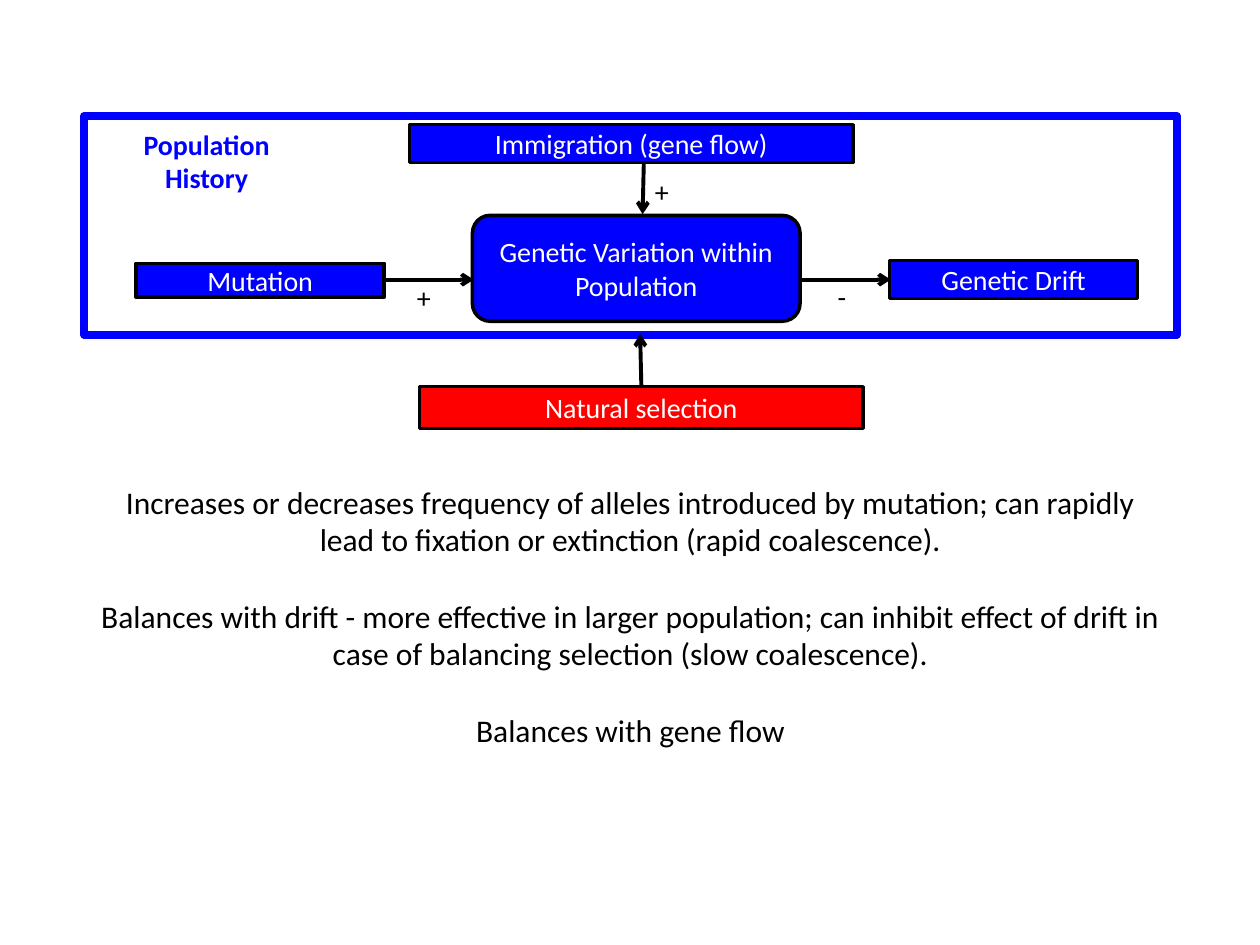
from dataclasses import dataclass

import pptx
import pptx.dml.color
import pptx.enum.shapes
import pptx.enum.text
import pptx.oxml.ns
import pptx.util
from lxml import etree

Pt = pptx.util.Pt
RGB = pptx.dml.color.RGBColor
SHAPES = pptx.enum.shapes.MSO_SHAPE
ALIGN = pptx.enum.text.PP_ALIGN


@dataclass(frozen=True)
class Theme:
    font: str = "Calibri"
    blue: RGB = RGB(0, 0, 255)
    red: RGB = RGB(255, 0, 0)
    black: RGB = RGB(0, 0, 0)
    white: RGB = RGB(255, 255, 255)
    label_size: float = 16
    body_size: float = 18
    box_line: float = 2
    arrow_line: float = 2.25
    frame_line: float = 4.5
    paragraph_gap: float = 22


THEME = Theme()


def write_text(frame, text, size, color, align=ALIGN.CENTER, bold=False, gap=0):
    frame.text = text
    for index, paragraph in enumerate(frame.paragraphs):
        paragraph.alignment = align
        if index and gap:
            paragraph.space_before = Pt(gap)
        for run in paragraph.runs:
            run.font.name = THEME.font
            run.font.size = Pt(size)
            run.font.bold = bold
            run.font.color.rgb = color


def add_outline(slide, place, line_color, line_width, preset=SHAPES.RECTANGLE):
    outline = slide.shapes.add_shape(preset, *map(Pt, place))
    outline.shadow.inherit = False
    outline.fill.background()
    outline.line.color.rgb = line_color
    outline.line.width = Pt(line_width)
    return outline


def add_factor(slide, text, place, fill=THEME.blue, preset=SHAPES.RECTANGLE):
    factor = add_outline(slide, place, THEME.black, THEME.box_line, preset)
    factor.fill.solid()
    factor.fill.fore_color.rgb = fill
    factor.text_frame.vertical_anchor = pptx.enum.text.MSO_ANCHOR.MIDDLE
    write_text(factor.text_frame, text, THEME.label_size, THEME.white)


def add_label(slide, text, place, color=THEME.black, align=ALIGN.LEFT, bold=False):
    label = slide.shapes.add_textbox(*map(Pt, place))
    label.text_frame.word_wrap = False
    write_text(label.text_frame, text, THEME.label_size, color, align, bold)


def add_arrow(slide, start, end):
    arrow = slide.shapes.add_connector(
        pptx.enum.shapes.MSO_CONNECTOR.STRAIGHT, *map(Pt, start + end))
    arrow.line.color.rgb = THEME.black
    arrow.line.width = Pt(THEME.arrow_line)
    qn = pptx.oxml.ns.qn
    etree.SubElement(arrow.line._get_or_add_ln(), qn("a:tailEnd"), type="arrow")
    etree.SubElement(arrow._element.spPr, qn("a:effectLst"))


def add_commentary(slide, paragraphs, place):
    commentary = slide.shapes.add_textbox(*map(Pt, place))
    commentary.text_frame.word_wrap = True
    write_text(commentary.text_frame, "\n".join(paragraphs), THEME.body_size,
               THEME.black, gap=THEME.paragraph_gap)


def main():
    deck = pptx.Presentation()
    deck.slide_width, deck.slide_height = Pt(720), Pt(540)
    slide = deck.slides.add_slide(deck.slide_layouts[6])

    add_factor(slide, "Genetic Variation within Population",
               (270, 123.1, 187.2, 60.5), preset=SHAPES.ROUNDED_RECTANGLE)
    add_factor(slide, "Mutation", (77.8, 150.5, 141.8, 19.4))
    add_factor(slide, "Genetic Drift", (508.3, 149, 141.8, 21.6))
    add_factor(slide, "Immigration (gene flow)", (234, 71.3, 253.4, 21.6))

    add_arrow(slide, (219.6, 159.8), (270.7, 159.8))
    add_arrow(slide, (457.9, 159.8), (509, 159.8))
    add_arrow(slide, (367.9, 93.6), (367.2, 122.4))

    add_label(slide, "+", (231.1, 157, 23.8, 26.6))
    add_label(slide, "-", (471.6, 156.2, 20.2, 26.6))
    add_label(slide, "+", (367.2, 96.5, 23.8, 26.6))

    add_outline(slide, (48.2, 66.2, 624.2, 125.3), THEME.blue, THEME.frame_line)
    add_label(slide, "Population\nHistory", (69.1, 69.1, 97.9, 46.1),
              THEME.blue, ALIGN.CENTER, bold=True)

    add_factor(slide, "Natural selection", (239.8, 221, 253.4, 23.8), THEME.red)
    add_arrow(slide, (366.5, 221), (365.8, 190.8))

    add_commentary(slide, [
        "Increases or decreases frequency of alleles introduced by mutation; "
        "can rapidly lead to fixation or extinction (rapid coalescence).",
        "Balances with drift - more effective in larger population; can inhibit "
        "effect of drift in case of balancing selection (slow coalescence).",
        "Balances with gene flow",
    ], (48.2, 272.2, 624.2, 225.4))

    deck.save("out.pptx")


if __name__ == "__main__":
    main()
